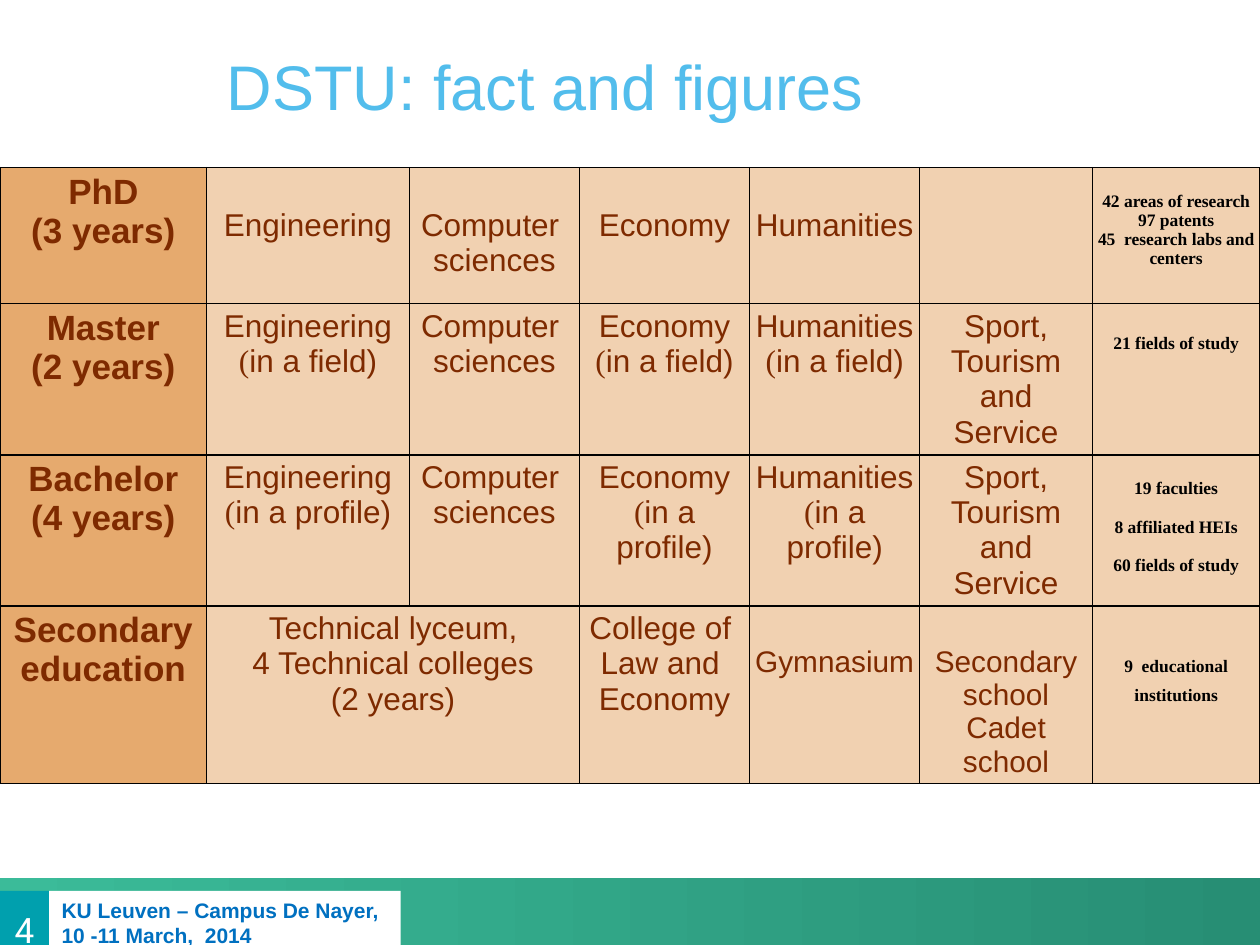
from lxml.etree import SubElement
from pptx import Presentation
from pptx.dml.color import RGBColor
from pptx.enum.shapes import MSO_SHAPE
from pptx.enum.text import MSO_ANCHOR, MSO_AUTO_SIZE, PP_ALIGN
from pptx.oxml.ns import qn
from pptx.util import Inches, Pt

SKY = RGBColor(0x52, 0xBD, 0xEC)
BROWN = RGBColor(0x7E, 0x2A, 0x00)
ORANGE = RGBColor(0xE6, 0xAA, 0x6E)
PEACH = RGBColor(0xF1, 0xD1, 0xB1)
GREEN = RGBColor(0x3B, 0xBB, 0x99)
DARK_GREEN = RGBColor(0x27, 0x8E, 0x74)
TEAL = RGBColor(0x00, 0xA0, 0xAE)
BLUE = RGBColor(0x00, 0x70, 0xC0)
WHITE = RGBColor(0xFF, 0xFF, 0xFF)
BLACK = RGBColor(0x00, 0x00, 0x00)
SANS, SERIF, NUMBER_FONT = "Arial", "Times New Roman", "Roboto"

COL_WIDTHS = [1.64, 1.61, 1.35, 1.35, 1.35, 1.37, 1.33]
ROW_HEIGHTS = [1.08, 1.2, 1.2, 1.4]
MARGIN = 0.04
COMPUTING = "Computer \nsciences"
SPORT = "Sport, Tourism and\nService"
LEVELS = [
    ["PhD\n(3 years)", "Engineering", COMPUTING, "Economy", "Humanities", "",
     "42 areas of research\n97 patents\n45  research labs and centers"],
    ["Master\n(2 years)", "Engineering\n(in a field)", COMPUTING,
     "Economy\n(in a field)", "Humanities\n(in a field)", SPORT,
     "21 fields of study"],
    ["Bachelor\n(4 years)", "Engineering\n(in a profile)", COMPUTING,
     "Economy\n(in a profile)", "Humanities\n(in a profile)", SPORT,
     "19 faculties\n8 affiliated HEIs\n60 fields of study"],
    ["Secondary\neducation",
     "Technical lyceum,\n4 Technical colleges\n(2 years)", "",
     "College of \nLaw and \nEconomy", "Gymnasium",
     "Secondary school\nCadet school", "9  educational institutions"],
]
# Cells whose text starts lower than the plain margin: (row, column) -> inches
TOP_MARGINS = {(0, 1): 0.32, (0, 2): 0.32, (0, 3): 0.32, (0, 4): 0.32,
               (0, 6): 0.19, (1, 6): 0.09,
               (3, 4): 0.31, (3, 5): 0.31, (3, 6): 0.33}
SIZES = {(3, 4): 17, (3, 5): 17}
FIGURE_SPACING = [1, 2, 2, 1.5]


class SlideBuilder:
    def __init__(self, prs):
        self.s = prs.slides.add_slide(prs.slide_layouts[5])

    def run(self, p, text, size, color, font=SANS, bold=False):
        r = p.add_run()
        r.text = text
        r.font.name, r.font.size, r.font.bold = font, Pt(size), bold
        r.font.color.rgb = color

    def title(self, text, left, top, width, height):
        sp = self.s.shapes.title
        sp.left, sp.top = Inches(left), Inches(top)
        sp.width, sp.height = Inches(width), Inches(height)
        tf = sp.text_frame
        tf.auto_size = MSO_AUTO_SIZE.NONE
        tf.vertical_anchor = MSO_ANCHOR.BOTTOM
        tf.margin_left = tf.margin_right = tf.margin_top = tf.margin_bottom = 0
        tf.paragraphs[0].alignment = PP_ALIGN.LEFT
        self.run(tf.paragraphs[0], text, 36, SKY)

    def box(self, left, top, width, height, fill=None):
        sp = self.s.shapes.add_shape(MSO_SHAPE.RECTANGLE, Inches(left),
                                     Inches(top), Inches(width), Inches(height))
        sp.shadow.inherit = False
        sp.line.fill.background()
        if fill is not None:
            sp.fill.solid()
            sp.fill.fore_color.rgb = fill
        tf = sp.text_frame
        tf.word_wrap = False
        tf.vertical_anchor = MSO_ANCHOR.MIDDLE
        return sp

    def band(self, left, top, width, height, start, end):
        sp = self.box(left, top, width, height)
        sp.fill.gradient()
        sp.fill.gradient_angle = 0
        for stop, color in zip(sp.fill.gradient_stops, (start, end)):
            stop.color.rgb = color

    def page_number(self, text, left, top, width, height):
        tf = self.box(left, top, width, height, TEAL).text_frame
        tf.margin_left = tf.margin_right = tf.margin_bottom = 0
        tf.margin_top = Inches(0.12)
        p = tf.paragraphs[0]
        p.alignment = PP_ALIGN.CENTER
        self.run(p, text, 20, WHITE, NUMBER_FONT)

    def event(self, lines, left, top, width, height):
        p = self.box(left, top, width, height, WHITE).text_frame.paragraphs[0]
        p.alignment = PP_ALIGN.LEFT
        for i, line in enumerate(lines):
            if i:
                p.add_line_break()
            self.run(p, line, 12, BLUE, bold=True)

    def borders(self, cell):
        tc_pr = cell._tc.get_or_add_tcPr()
        for i, side in enumerate(("lnL", "lnR", "lnT", "lnB")):
            ln = tc_pr.makeelement(qn(f"a:{side}"), {"w": str(Pt(1))})
            fill = SubElement(ln, qn("a:solidFill"))
            SubElement(fill, qn("a:srgbClr"), val=str(BLACK))
            tc_pr.insert(i, ln)  # borders come before the fill

    def cell(self, cell, text, fill, top, size, color, font, bold, spacing):
        cell.fill.solid()
        cell.fill.fore_color.rgb = fill
        self.borders(cell)
        cell.margin_left = cell.margin_right = cell.margin_bottom = Inches(MARGIN)
        cell.margin_top = Inches(top)
        tf = cell.text_frame
        for i, line in enumerate(text.split("\n") if text else []):
            p = tf.add_paragraph() if i else tf.paragraphs[0]
            p.alignment = PP_ALIGN.CENTER
            p.line_spacing = spacing
            if line.startswith("(in"):
                self.run(p, "(", size, color, SERIF, bold)
                line = line[1:]
            self.run(p, line, size, color, font, bold)

    def table(self, left, top):
        tbl = self.s.shapes.add_table(
            len(LEVELS), len(COL_WIDTHS), Inches(left), Inches(top),
            Inches(sum(COL_WIDTHS)), Inches(sum(ROW_HEIGHTS))).table
        tbl.first_row = tbl.horz_banding = False
        for col, width in zip(tbl.columns, COL_WIDTHS):
            col.width = Inches(width)
        for row, height in zip(tbl.rows, ROW_HEIGHTS):
            row.height = Inches(height)
        tbl.cell(3, 1).merge(tbl.cell(3, 2))
        last = len(COL_WIDTHS) - 1
        for r, texts in enumerate(LEVELS):
            for c, text in enumerate(texts):
                if c == 0:
                    style = (20, BROWN, SANS, True, 1)
                elif c == last:
                    style = (10, BLACK, SERIF, True, FIGURE_SPACING[r])
                else:
                    style = (SIZES.get((r, c), 18), BROWN, SANS, False, 1)
                self.cell(tbl.cell(r, c), text, PEACH if c else ORANGE,
                          TOP_MARGINS.get((r, c), MARGIN), *style)


def main():
    prs = Presentation()
    prs.slide_width, prs.slide_height = Inches(10), Inches(7.5)
    b = SlideBuilder(prs)
    b.band(0, 6.97, 10, 0.6, GREEN, DARK_GREEN)
    b.page_number("4", 0, 7.07, 0.39, 0.5)
    b.event(["KU Leuven – Campus De Nayer, ", "10 -11 March,  2014"],
            0.39, 7.07, 2.79, 0.5)
    b.title("DSTU: fact and figures", 1.8, 0, 5.78, 0.98)
    b.table(0, 1.33)
    prs.save("out.pptx")


if __name__ == "__main__":
    main()
